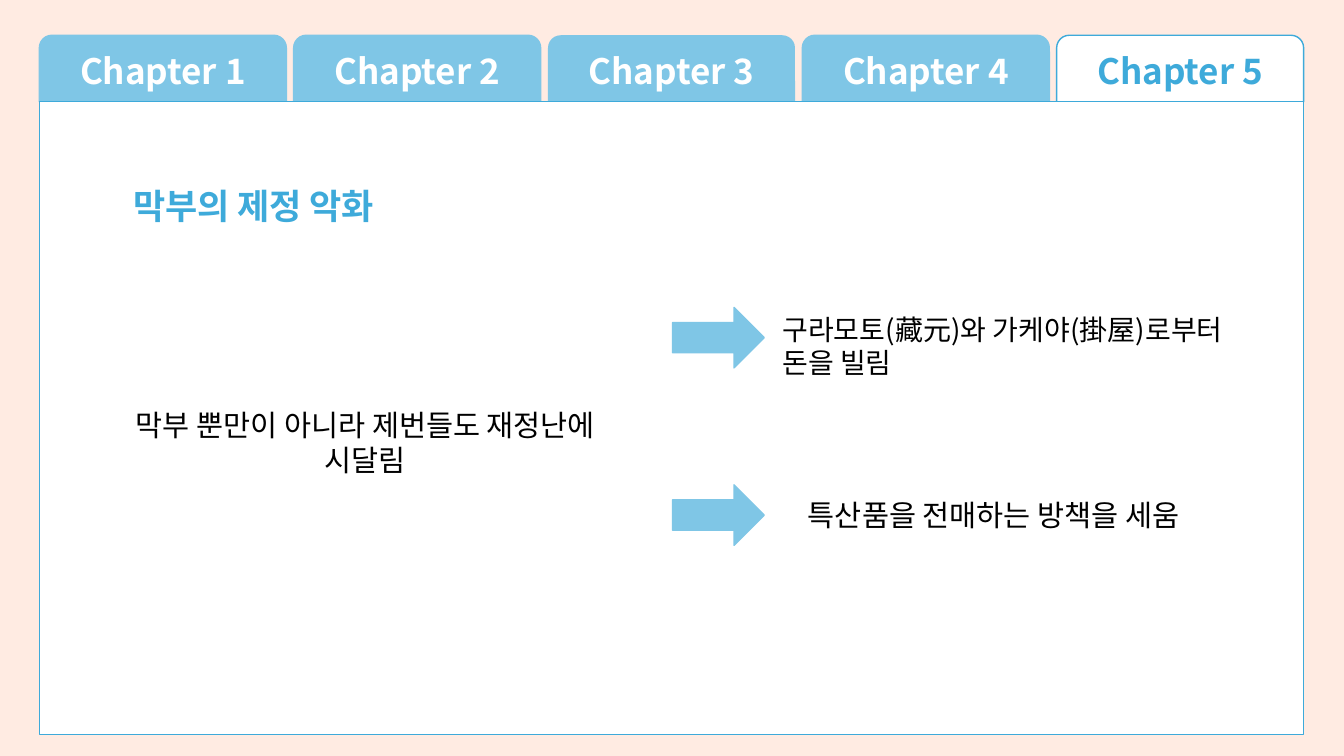
from pptx import Presentation
from pptx.dml.color import RGBColor
from pptx.enum import shapes, text
from pptx.oxml import ns
from pptx.util import Inches, Pt
from lxml import etree

PEACH = RGBColor(0xFF, 0xEB, 0xE2)
SKY = RGBColor(0x7F, 0xC6, 0xE6)
BLUE = RGBColor(0x3E, 0xAA, 0xDA)
WHITE = RGBColor(255, 255, 255)
BLACK = RGBColor(0, 0, 0)
FONT = "Noto Sans CJK KR"
SHAPE = shapes.MSO_SHAPE
CENTER, LEFT = text.PP_ALIGN.CENTER, text.PP_ALIGN.LEFT


def write(frame, words, size, color, bold=False, align=CENTER):
    frame.word_wrap = True
    para = frame.paragraphs[0]
    para.text = words
    para.alignment = align
    font = para.runs[0].font
    font.name, font.size, font.bold = FONT, Pt(size), bold
    font.color.rgb = color
    etree.SubElement(font._element, ns.qn("a:ea"), typeface=FONT)


def draw(slide, kind, box, fill, line):
    shape = slide.shapes.add_shape(kind, *map(Inches, box))
    shape.shadow.inherit = False
    shape.fill.solid()
    shape.fill.fore_color.rgb = fill
    if line is None:
        shape.line.fill.background()
    else:
        shape.line.color.rgb = line
        shape.line.width = Pt(1)
    return shape


def label(slide, box, words, size, color=BLACK, bold=False, align=CENTER):
    area = slide.shapes.add_textbox(*map(Inches, box))
    write(area.text_frame, words, size, color, bold, align)
    area.text_frame.auto_size = text.MSO_AUTO_SIZE.SHAPE_TO_FIT_TEXT


def tabs(slide, box, count, active):
    left, top, width, height = box
    wide = 2.45
    step = (width - wide) / (count - 1)
    for num in range(1, count + 1):
        fill, line, color = SKY, SKY, WHITE
        if num == active:
            fill, line, color = WHITE, BLUE, BLUE
        elif num == 3:
            line = None
        spot = (left + (num - 1) * step, top, wide, height)
        tab = draw(slide, SHAPE.ROUND_2_SAME_RECTANGLE, spot, fill, line)
        tab.adjustments[0] = 0.19
        tab.adjustments[1] = 0
        tab.text_frame.vertical_anchor = text.MSO_ANCHOR.MIDDLE
        write(tab.text_frame, f"Chapter {num}", 25, color, True)


def panel(slide, box):
    left, top, _, _ = box
    draw(slide, SHAPE.RECTANGLE, box, WHITE, BLUE)
    label(slide, (left + 0.29, top + 0.77, 3.67, 0.52),
          "막부의 제정 악화", 25, BLUE, True)
    label(slide, (left + 0.44, top + 2.98, 5.59, 0.81),
          "막부 뿐만이 아니라 제번들도 재정난에 시달림", 21)
    label(slide, (left + 7.27, top + 2.04, 4.98, 0.77),
          "구라모토(藏元)와 가케야(掛屋)로부터 돈을 빌림", 20, align=LEFT)
    label(slide, (left + 6.67, top + 3.87, 5.59, 0.45),
          "특산품을 전매하는 방책을 세움", 21)
    for drop in (2.04, 3.8):
        spot = (left + 6.28, top + drop, 0.91, 0.6)
        draw(slide, SHAPE.RIGHT_ARROW, spot, SKY, SKY)


def main():
    deck = Presentation()
    deck.slide_width, deck.slide_height = Inches(13.33), Inches(7.5)
    slide = deck.slides.add_slide(deck.slide_layouts[6])
    slide.background.fill.solid()
    slide.background.fill.fore_color.rgb = PEACH
    tabs(slide, (0.39, 0.35, 12.54, 0.66), 5, 5)
    panel(slide, (0.39, 1.01, 12.54, 6.28))
    deck.save("out.pptx")


if __name__ == "__main__":
    main()
